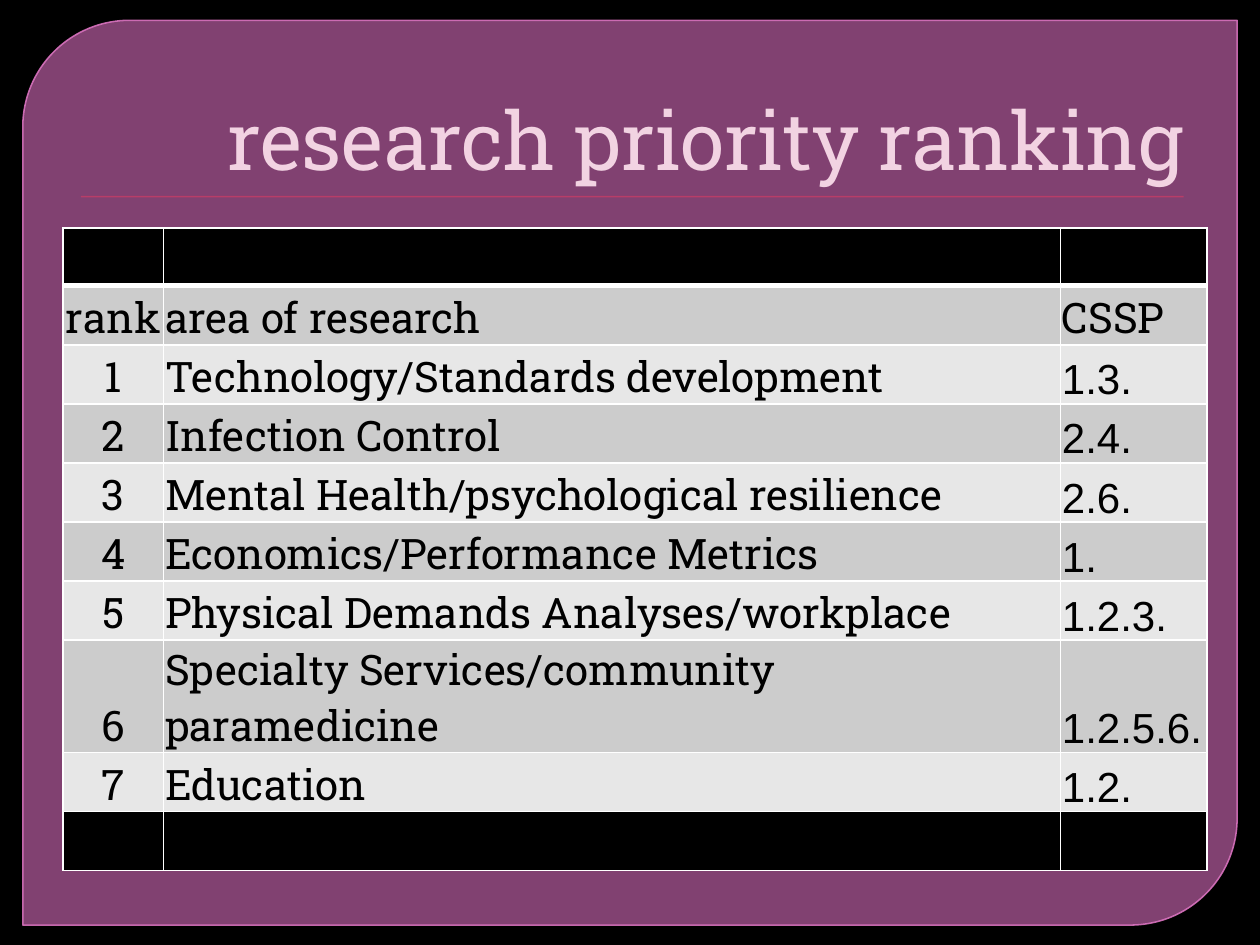
"""Build the research priority ranking slide."""
from lxml import etree
from pptx import Presentation
from pptx import util as u
from pptx.dml.color import RGBColor
from pptx.enum import shapes, text
from pptx.oxml import ns

COLORS = {"black": "000000", "white": "FFFFFF", "panel": "C764AF", "edge": "DD75C2",
          "rule": "B83D68", "title": "F2D3E2", "dark": "CCCCCC", "light": "E7E7E7"}
SERIF, SANS = "Roboto Slab", "Arial"
RANKING = [
    ("", "", ""),
    ("rank", "area of research", "CSSP"),
    ("1", "Technology/Standards development", "1.3."),
    ("2", "Infection Control", "2.4."),
    ("3", "Mental Health/psychological resilience", "2.6."),
    ("4", "Economics/Performance Metrics", "1."),
    ("5", "Physical Demands Analyses/workplace", "1.2.3."),
    ("6", "Specialty Services/community paramedicine", "1.2.5.6."),
    ("7", "Education", "1.2."),
    ("", "", ""),
]


def paint(fill, name, alpha=None):
    fill.solid()
    fill.fore_color.rgb = RGBColor.from_string(COLORS[name])
    if alpha:
        color = fill._xPr.find(".//" + ns.qn("a:srgbClr"))
        etree.SubElement(color, ns.qn("a:alpha"), val=str(alpha * 1000))


def write(paragraph, words, font, size, color, align):
    run = paragraph.add_run()
    run.text = words
    paragraph.alignment = align
    for key, value in {"name": font, "size": u.Pt(size), "bold": False}.items():
        setattr(run.font, key, value)
    paint(run.font.fill, color)


deck = Presentation()
deck.slide_width, deck.slide_height = u.Cm(25.4), u.Cm(19.05)
slide = deck.slides.add_slide(deck.slide_layouts[5])
paint(slide.background.fill, "black")

panel = slide.shapes.add_shape(shapes.MSO_SHAPE.ROUND_2_DIAG_RECTANGLE,
                               u.Cm(0.46), u.Cm(0.41), u.Cm(24.48), u.Cm(18.24))
panel.adjustments[0], panel.adjustments[1] = 0.118, 0
panel.shadow.inherit = False
paint(panel.fill, "panel", 65)
paint(panel.line.fill, "edge", 88)
panel.line.width = u.Pt(0.87)

rule = slide.shapes.add_shape(shapes.MSO_SHAPE.RECTANGLE,
                              u.Cm(1.63), u.Cm(3.95), u.Cm(22.23), u.Cm(0.03))
rule.shadow.inherit = False
paint(rule.fill, "rule")
rule.line.fill.background()

heading = slide.shapes.title
slide.shapes._spTree.append(heading._element)
for key, value in {"left": 1.27, "top": 0.71, "width": 22.86, "height": 3.18}.items():
    setattr(heading, key, u.Cm(value))
for key, value in {"vertical_anchor": text.MSO_ANCHOR.BOTTOM, "word_wrap": True,
                   "auto_size": text.MSO_AUTO_SIZE.NONE}.items():
    setattr(heading.text_frame, key, value)
write(heading.text_frame.paragraphs[0], "research priority ranking", SERIF, 46, "title",
      text.PP_ALIGN.RIGHT)

ranking = slide.shapes.add_table(len(RANKING), 3, u.Cm(1.27), u.Cm(4.6),
                                 u.Cm(23.06), u.Cm(11.84)).table
for column, width in zip(ranking.columns, (2.03, 18.08, 2.95)):
    column.width = u.Cm(width)
for row in ranking.rows:
    row.height = u.Cm(1.19)
ranking.rows[0].height = u.Cm(1.16)

cell_format = {"margin_left": u.Cm(0.03), "margin_right": u.Cm(0.03), "margin_top": u.Cm(0.03),
               "margin_bottom": 0, "vertical_anchor": text.MSO_ANCHOR.BOTTOM}
for r, entry in enumerate(RANKING):
    for c, words in enumerate(entry):
        cell = ranking.cell(r, c)
        for key, value in cell_format.items():
            setattr(cell, key, value)
        for side in "LRTB":
            thick = (r, side) in ((0, "B"), (1, "T"))
            border = etree.SubElement(cell._tc.get_or_add_tcPr(), ns.qn("a:ln" + side),
                                      w=str(u.Pt(3 if thick else 1)))
            ink = etree.SubElement(border, ns.qn("a:solidFill"))
            etree.SubElement(ink, ns.qn("a:srgbClr"), val=COLORS["white"])
        cell.fill.solid()
        paint(cell.fill, ("light", "dark")[r % 2] if words else "black")
        if words:
            write(cell.text_frame.paragraphs[0], words, SANS if c == 2 and r > 1 else SERIF, 24,
                  "black", text.PP_ALIGN.LEFT if c else text.PP_ALIGN.CENTER)

deck.save("out.pptx")
